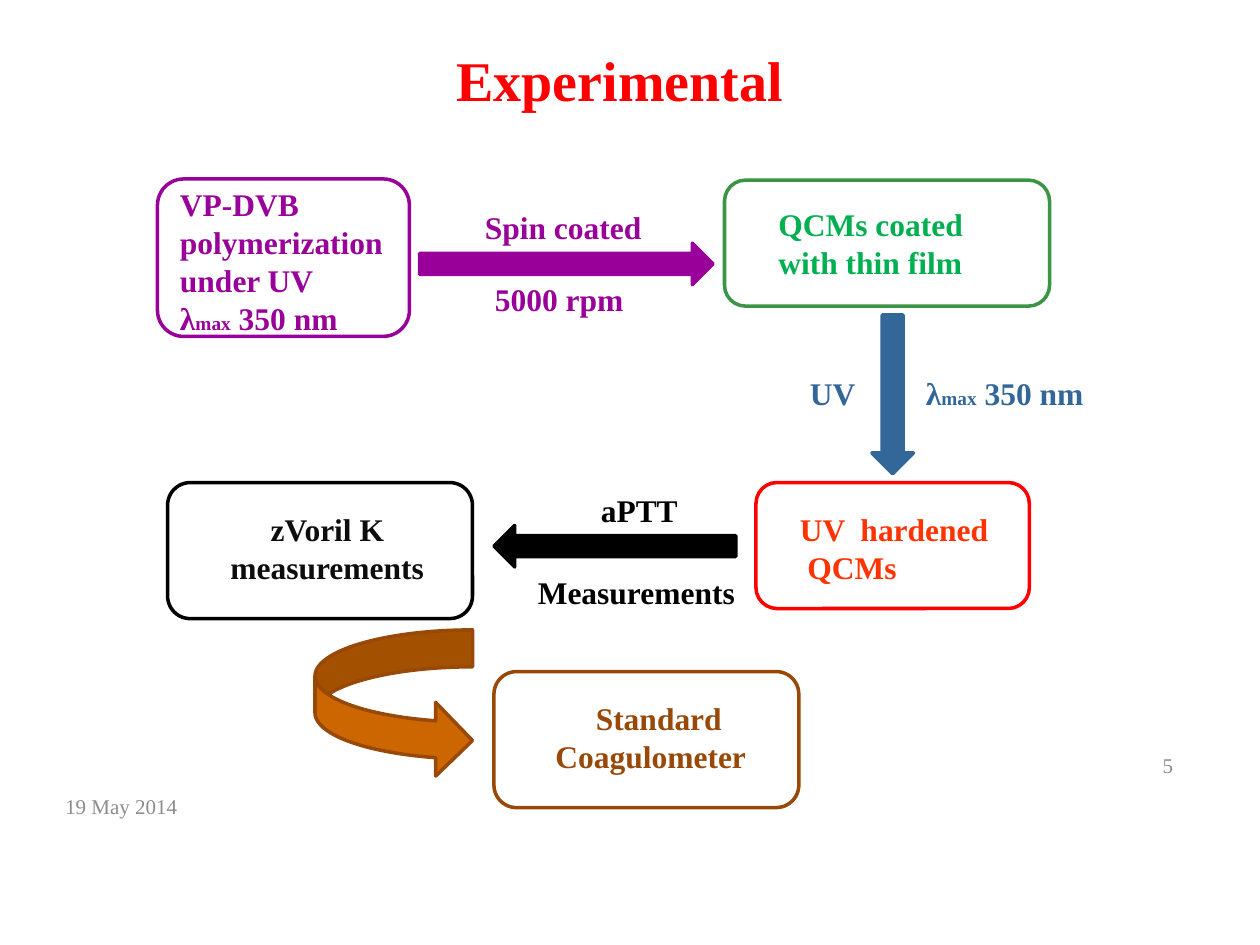
from pptx import Presentation
from pptx import util as u
from pptx.dml.color import RGBColor
from pptx.enum import shapes, text

FONT = "Times New Roman"
PURPLE, BLUE, BROWN, BLACK, RED, GRAY = "990099", "336699", "984807", "000000", "FF0000", "8C8C8C"
KIND = shapes.MSO_SHAPE
WAVELENGTH = [("λ", 18), ("max", 11), (" 350 nm", 18)]

STEPS = [
    (KIND.ROUNDED_RECTANGLE, (1.25, 1.42, 2, 1.25), None, PURPLE),
    (KIND.ROUNDED_RECTANGLE, (5.75, 1.43, 2.58, 1), None, "3C9446"),
    (KIND.ROUNDED_RECTANGLE, (6, 3.83, 2.17, 1), None, RED),
    (KIND.ROUNDED_RECTANGLE, (1.33, 3.83, 2.42, 1.08), None, BLACK),
    (KIND.ROUNDED_RECTANGLE, (3.92, 5.33, 2.42, 1.08), None, BROWN),
    (KIND.RIGHT_ARROW, (3.33, 1.93, 2.33, 0.33), PURPLE, PURPLE),
    (KIND.DOWN_ARROW, (6.92, 2.5, 0.33, 1.26), BLUE, BLUE),
    (KIND.LEFT_ARROW, (3.92, 4.17, 1.92, 0.33), BLACK, BLACK),
    (KIND.CURVED_RIGHT_ARROW, (2.5, 5, 1.25, 1.17), "CC6600", BROWN),
]

LABELS = [
    ((1.33, 1.42, 1.89, 1.62), PURPLE,
     [(0, "VP-DVB"), (0, "polymerization"), (0, "under UV"), (0, WAVELENGTH)]),
    ((6.08, 1.58, 1.74, 0.71), "00B050", [(0, "QCMs coated"), (0, "with thin film")]),
    ((6.25, 4, 1.77, 0.71), "FF3300", [(0, "UV  hardened"), (0.06, "QCMs")]),
    ((1.67, 4, 1.82, 0.71), "0D0D0D", [(0.38, "zVoril K"), (0.06, "measurements")]),
    ((4.25, 5.5, 1.79, 0.71), BROWN, [(0.38, "Standard"), (0.06, "Coagulometer")]),
    ((3.75, 1.6, 1.46, 0.4), PURPLE, [(0, "Spin coated")]),
    ((3.83, 2.17, 1.23, 0.4), PURPLE, [(0, "5000 rpm")]),
    ((6.33, 2.92, 0.56, 0.4), BLUE, [(0, "UV")]),
    ((7.25, 2.92, 1.45, 0.4), BLUE, [(0, WAVELENGTH)]),
    ((4.67, 3.85, 0.82, 0.4), BLACK, [(0, "aPTT")]),
    ((4.17, 4.5, 1.78, 0.4), BLACK, [(0, "Measurements")]),
]

FOOTERS = [
    ((0.42, 6.2, 2.33, 0.4), "19 May 2014", text.PP_ALIGN.LEFT),
    ((7.08, 5.87, 2.33, 0.4), "5", text.PP_ALIGN.RIGHT),
]


def color(value):
    return RGBColor.from_string(value)


def inches(place):
    return [u.Inches(value) for value in place]


def add_span(para, wording, size, shade, bold=True):
    span = para.add_run()
    span.text = wording
    span.font.color.rgb = color(shade)
    for name, value in {"name": FONT, "size": u.Pt(size), "bold": bold}.items():
        setattr(span.font, name, value)


def add_step(page, kind, place, fill, line):
    step = page.shapes.add_shape(kind, *inches(place))
    step.shadow.inherit = False
    if fill:
        step.fill.solid()
        step.fill.fore_color.rgb = color(fill)
    else:
        step.fill.background()
    step.line.color.rgb = color(line)
    step.line.width = u.Pt(2)


def add_label(page, place, shade, lines):
    box = page.shapes.add_textbox(*inches(place))
    frame = box.text_frame
    frame.word_wrap = False
    for number, (indent, wording) in enumerate(lines):
        para = frame.add_paragraph() if number else frame.paragraphs[0]
        if indent:
            para._p.get_or_add_pPr().set("marL", str(u.Inches(indent)))
        spans = [(wording, 18)] if isinstance(wording, str) else wording
        for part, size in spans:
            add_span(para, part, size, shade)


def add_footer(page, place, wording, align):
    frame = page.shapes.add_textbox(*inches(place)).text_frame
    frame.word_wrap = True
    frame.vertical_anchor = text.MSO_ANCHOR.MIDDLE
    frame.paragraphs[0].alignment = align
    add_span(frame.paragraphs[0], wording, 12, GRAY, bold=False)


def add_title(page):
    title = page.shapes.title
    for name, value in zip(("left", "top", "width", "height"), inches((0.42, 0, 9, 1.25))):
        setattr(title, name, value)
    title.text_frame.vertical_anchor = text.MSO_ANCHOR.MIDDLE
    para = title.text_frame.paragraphs[0]
    para.alignment = text.PP_ALIGN.CENTER
    add_span(para, "Experimental", 32, RED)


def main():
    deck = Presentation()
    deck.slide_width, deck.slide_height = inches((10, 7.5))
    page = deck.slides.add_slide(deck.slide_layouts[5])
    add_title(page)
    for step in STEPS:
        add_step(page, *step)
    for label in LABELS:
        add_label(page, *label)
    for footer in FOOTERS:
        add_footer(page, *footer)
    deck.save("out.pptx")


if __name__ == "__main__":
    main()
